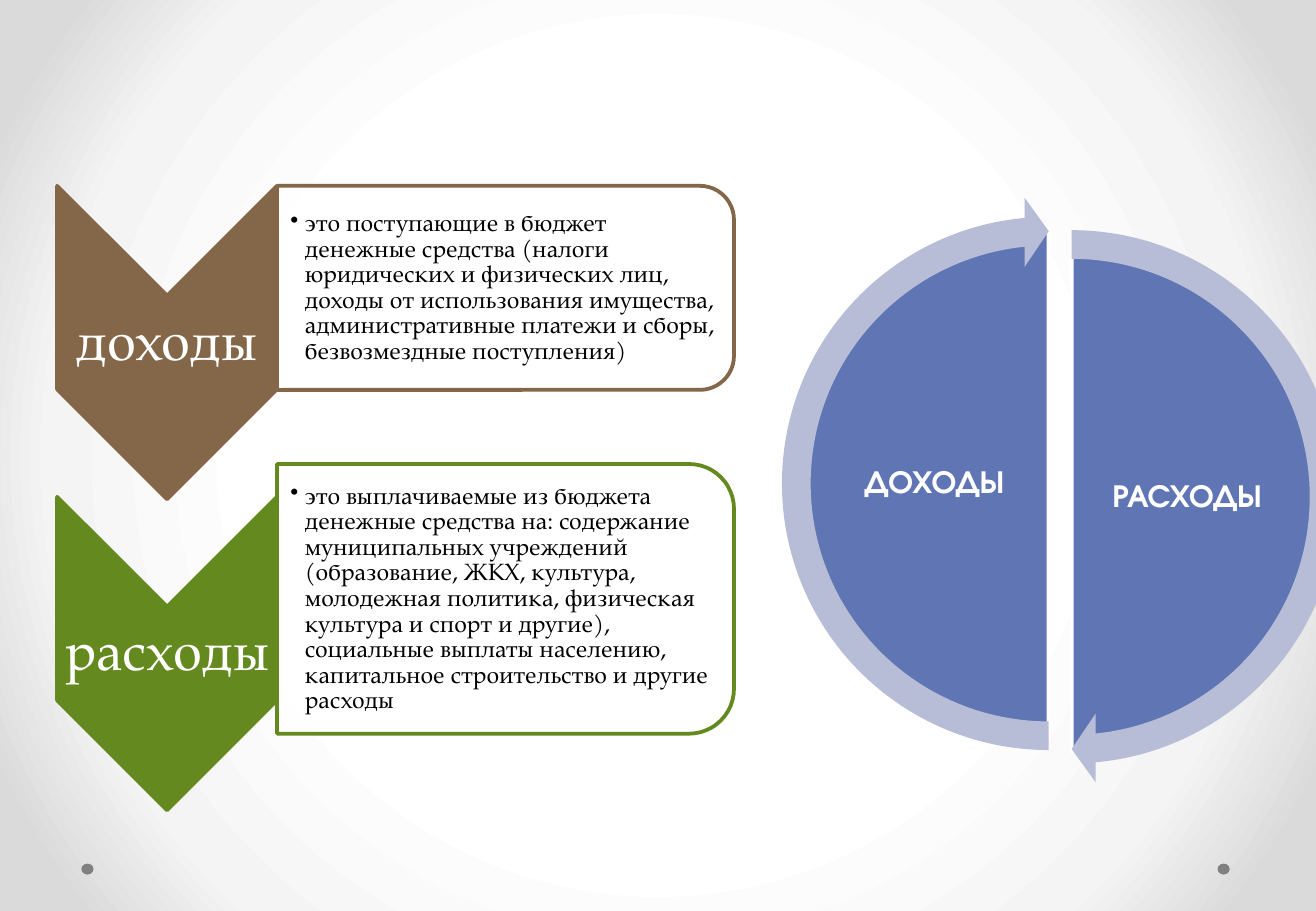
from lxml import etree
from pptx import Presentation, util as u
from pptx.dml.color import RGBColor
from pptx.enum import shapes, text
from pptx.oxml import parse_xml
from pptx.oxml.ns import qn

WHITE = RGBColor(0xFF, 0xFF, 0xFF)
BLACK = RGBColor(0, 0, 0)
GRAY = RGBColor(0x80, 0x80, 0x80)
BROWN = RGBColor(0x84, 0x66, 0x48)
GREEN = RGBColor(0x63, 0x89, 0x1F)
BLUE = RGBColor(0x60, 0x76, 0xB4)
PALE = RGBColor(0xB7, 0xBD, 0xD6)
STOPS = [(50, "FFFFFF"), (76, "F4F4F4"), (92, "DADADA")]
NS = "http://schemas.openxmlformats.org"

SERIF = "TeX Gyre Pagella"
SANS = "TeX Gyre Adventor"
TITLE = {"name": SERIF, "size": u.Pt(32)}
BODY = {"name": SERIF, "size": u.Pt(14)}
LABEL = {"name": SANS, "size": u.Pt(19), "bold": True}
KIND = shapes.MSO_SHAPE

ROWS = [
    ("доходы", BROWN, 1.53, 1.53, 1.68,
     "это поступающие в бюджет денежные средства (налоги юридических и "
     "физических лиц, доходы от использования имущества, административные "
     "платежи и сборы, безвозмездные поступления)"),
    ("расходы", GREEN, 4.09, 3.82, 2.22,
     "это выплачиваемые из бюджета денежные средства на: содержание "
     "муниципальных учреждений (образование, ЖКХ, культура, молодежная "
     "политика, физическая культура и спорт и другие), социальные выплаты "
     "населению, капитальное строительство и другие расходы"),
]
HALVES = [
    ("РАСХОДЫ", 6.72, 1.99, 2.3, 162, 54, 50.73),
    ("ДОХОДЫ", 6.53, 1.88, 0.41, 54, 162, 158.73),
]


def apply(item, form):
    for key, val in form.items():
        setattr(item, key, val)


def backdrop(slide):
    stops = "".join(
        f'<a:gs pos="{pos * 1000}"><a:srgbClr val="{hue}"/></a:gs>'
        for pos, hue in STOPS)
    slide.element.cSld.insert(0, parse_xml(
        f'<p:bg xmlns:p="{NS}/presentationml/2006/main" '
        f'xmlns:a="{NS}/drawingml/2006/main"><p:bgPr>'
        f'<a:gradFill rotWithShape="1"><a:gsLst>{stops}</a:gsLst>'
        '<a:path path="circle"><a:fillToRect l="50000" t="50000" '
        'r="50000" b="50000"/></a:path></a:gradFill>'
        '<a:effectLst/></p:bgPr></p:bg>'))


def draw(slide, kind, box, fill, edge=None, turn=0, adj=()):
    shape = slide.shapes.add_shape(kind, *map(u.Inches, box))
    shape.shadow.inherit = False
    shape.rotation = turn
    shape.fill.solid()
    shape.fill.fore_color.rgb = fill
    if edge is None:
        shape.line.fill.background()
    else:
        shape.line.color.rgb = edge
        shape.line.width = u.Pt(2.25)
    for i, val in enumerate(adj):
        shape.adjustments[i] = val
    return shape


def upright(slide, kind, box, fill, edge):
    x, y, w, h = box
    return draw(slide, kind, (x + (w - h) / 2, y + (h - w) / 2, h, w),
                fill, edge, 90)


def write(slide, box, words, font, hue, inset, bullet=False):
    frame = slide.shapes.add_textbox(*map(u.Inches, box)).text_frame
    pad = u.Inches(inset)
    apply(frame, {
        "word_wrap": True, "vertical_anchor": text.MSO_ANCHOR.MIDDLE,
        "margin_left": u.Inches(0.11) if bullet else pad,
        "margin_right": pad, "margin_top": pad, "margin_bottom": pad})
    para = frame.paragraphs[0]
    para.line_spacing = 0.9
    para.alignment = text.PP_ALIGN.LEFT if bullet else text.PP_ALIGN.CENTER
    props = para._p.get_or_add_pPr()
    after = etree.SubElement(props, qn("a:spcAft"))
    etree.SubElement(after, qn("a:spcPct")).set(
        "val", "15000" if bullet else "35000")
    if bullet:
        dent = u.Inches(0.12)
        props.set("marL", str(dent))
        props.set("indent", str(-dent))
        etree.SubElement(props, qn("a:buChar")).set("char", "•")
    run = para.add_run()
    run.text = words
    apply(run.font, font)
    run.font.color.rgb = hue


def row(slide, left, name, hue, top, card, high, words):
    wide = 1.81
    upright(slide, KIND.CHEVRON, (left, top, wide, 2.58), hue, hue)
    write(slide, (left, top + wide / 2, wide, 0.77), name, TITLE, WHITE, 0.02)
    x, w = left + wide, 3.76
    panel = upright(slide, KIND.ROUND_2_SAME_RECTANGLE, (x, card, w, high),
                    WHITE, hue)
    tint = panel.fill._xPr.find(".//" + qn("a:srgbClr"))
    etree.SubElement(tint, qn("a:alpha")).set("val", "90000")
    write(slide, (x, card + high * 0.05, w - high * 0.05, high * 0.9),
          words, BODY, BLACK, 0.01, True)


def cycle(slide, halves):
    size, rim = 4.2, 0.26
    for name, x, y, shift, start, end, _ in halves:
        draw(slide, KIND.PIE, (x, y, size, size), BLUE, WHITE,
             adj=(start, end))
        write(slide, (x + shift, y + 1.1, 1.5, 2), name, LABEL, WHITE, 0.03)
    for _, x, y, _, start, end, tip in halves:
        span = size + 2 * rim
        draw(slide, KIND.CIRCULAR_ARROW, (x - rim, y - rim, span, span), PALE,
             adj=(0.05, 3.28, tip, start, 0.06))


def main():
    deck = Presentation()
    deck.slide_width, deck.slide_height = u.Inches(10.83), u.Inches(7.5)
    slide = deck.slides.add_slide(deck.slide_layouts[6])
    backdrop(slide)
    for x in (10.02, 0.67):
        draw(slide, KIND.OVAL, (x, 7.11, 0.1, 0.09), GRAY)
    for item in ROWS:
        row(slide, 0.47, *item)
    cycle(slide, HALVES)
    deck.save("out.pptx")


if __name__ == "__main__":
    main()
